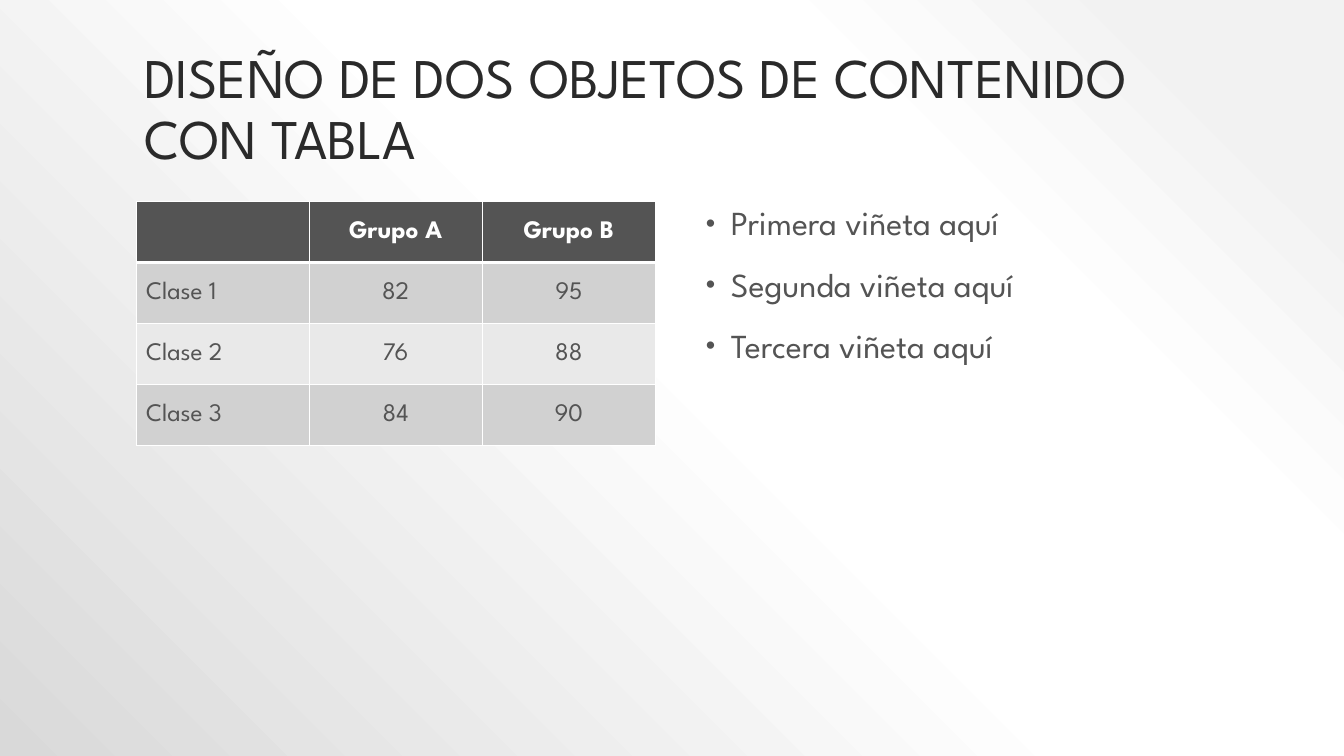
import dataclasses

import lxml.etree
import pptx
import pptx.dml.color
import pptx.enum.text
import pptx.oxml
import pptx.oxml.ns
import pptx.util

PX = 9144
ALIGN = pptx.enum.text.PP_ALIGN
ANCHOR = pptx.enum.text.MSO_ANCHOR


@dataclasses.dataclass(frozen=True)
class Theme:
    """Colours, font and type sizes of the slide."""
    font: str = "League Spartan"
    title: str = "2A2A2A"
    text: str = "545454"
    white: str = "FFFFFF"
    bands: tuple = ("D1D1D1", "E9E9E9")
    backdrop: tuple = ((10, "F2F2F2"), (28, "FFFFFF"), (48, "FFFFFF"), (100, "D9D9D9"))
    title_size: int = 40
    body_size: int = 24
    table_size: int = 18


THEME = Theme()


def rgb(color):
    """Return a colour object for a hex string."""
    return pptx.dml.color.RGBColor.from_string(color)


def parse_xml(xml):
    """Return an element from markup that uses the drawing prefix."""
    head, tail = xml.split(">", 1)
    close = "/" if head.endswith("/") else ""
    return pptx.oxml.parse_xml(
        f"{head.rstrip('/')} {pptx.oxml.ns.nsdecls('a')}{close}>{tail}")


def add_run(p, text, size, color, bold=False):
    """Add one styled run to a paragraph."""
    r = p.add_run()
    r.text = text
    r.font.name = THEME.font
    r.font.size = pptx.util.Pt(size)
    r.font.bold = bold
    r.font.color.rgb = rgb(color)


def place(sp, box):
    """Move a placeholder to a box in px and return its text frame."""
    sp.left, sp.top, sp.width, sp.height = (n * PX for n in box)
    tf = sp.text_frame
    tf.word_wrap = True
    tf.auto_size = pptx.enum.text.MSO_AUTO_SIZE.NONE
    return tf


def paint_background(s):
    """Fill the background with a gradient that spreads from the top right."""
    s.background.fill.gradient()
    old = s.element.xpath("./p:cSld/p:bg/p:bgPr/a:gradFill")[0]
    stops = "".join(
        f'<a:gs pos="{pos * 1000}"><a:srgbClr val="{color}"/></a:gs>'
        for pos, color in THEME.backdrop)
    new = parse_xml(
        f'<a:gradFill rotWithShape="1"><a:gsLst>{stops}</a:gsLst><a:path path="circle">'
        '<a:fillToRect l="100000" b="100000"/></a:path></a:gradFill>')
    old.getparent().replace(old, new)


def add_title(s, box, text):
    """Fill the title placeholder."""
    tf = place(s.shapes.title, box)
    tf.vertical_anchor = ANCHOR.BOTTOM
    p = tf.paragraphs[0]
    p.alignment = ALIGN.LEFT
    p.line_spacing = 0.9
    add_run(p, text, THEME.title_size, THEME.title)


def set_borders(cell, top, bottom):
    """Draw white borders around a cell, with top and bottom widths in points."""
    tcPr = cell._tc.get_or_add_tcPr()
    for side, width in (("L", 1), ("R", 1), ("T", top), ("B", bottom)):
        tcPr.append(parse_xml(
            f'<a:ln{side} w="{width * 12700}"><a:solidFill>'
            f'<a:srgbClr val="{THEME.white}"/></a:solidFill></a:ln{side}>'))


def add_score_table(s, box, rows):
    """Add the table with a dark header row and banded body rows."""
    x, y, w, h = (n * PX for n in box)
    table = s.shapes.add_table(len(rows), len(rows[0]), x, y, w, h).table
    for i, row in enumerate(rows):
        header = i == 0
        fill = THEME.text if header else THEME.bands[(i - 1) % 2]
        color = THEME.white if header else THEME.text
        for j, text in enumerate(row):
            cell = table.cell(i, j)
            set_borders(cell, 3 if i == 1 else 1, 3 if header else 1)
            cell.fill.solid()
            cell.fill.fore_color.rgb = rgb(fill)
            cell.vertical_anchor = ANCHOR.MIDDLE
            p = cell.text_frame.paragraphs[0]
            p.alignment = ALIGN.CENTER if j else ALIGN.LEFT
            if text:
                add_run(p, text, THEME.table_size, color, header)


def add_bullets(s, box, items):
    """Fill the body placeholder with a bulleted list."""
    tf = place(s.placeholders[1], box)
    for i, item in enumerate(items):
        p = tf.add_paragraph() if i else tf.paragraphs[0]
        p.line_spacing = 0.9
        p.space_before = pptx.util.Pt(18)
        pPr = p._p.get_or_add_pPr()
        pPr.set("marL", str(30 * PX))
        pPr.set("indent", str(-25 * PX))
        for xml in (f'<a:buClr><a:srgbClr val="{THEME.text}"/></a:buClr>',
                    '<a:buSzPct val="80000"/>',
                    '<a:buFont typeface="Arial"/>',
                    '<a:buChar char="•"/>'):
            pPr.append(parse_xml(xml))
        add_run(p, item, THEME.body_size, THEME.text)


def main():
    """Build and save the slide."""
    prs = pptx.Presentation()
    prs.slide_width, prs.slide_height = 1333 * PX, 750 * PX
    s = prs.slides.add_slide(prs.slide_layouts[1])
    paint_background(s)
    add_title(s, (133, 30, 1067, 145), "DISEÑO DE DOS OBJETOS DE CONTENIDO CON TABLA")
    add_score_table(s, (135, 200, 515, 242), (
        ("", "Grupo A", "Grupo B"),
        ("Clase 1", "82", "95"),
        ("Clase 2", "76", "88"),
        ("Clase 3", "84", "90"),
    ))
    add_bullets(s, (685, 200, 515, 475), (
        "Primera viñeta aquí", "Segunda viñeta aquí", "Tercera viñeta aquí"))
    prs.save("out.pptx")


if __name__ == "__main__":
    main()
